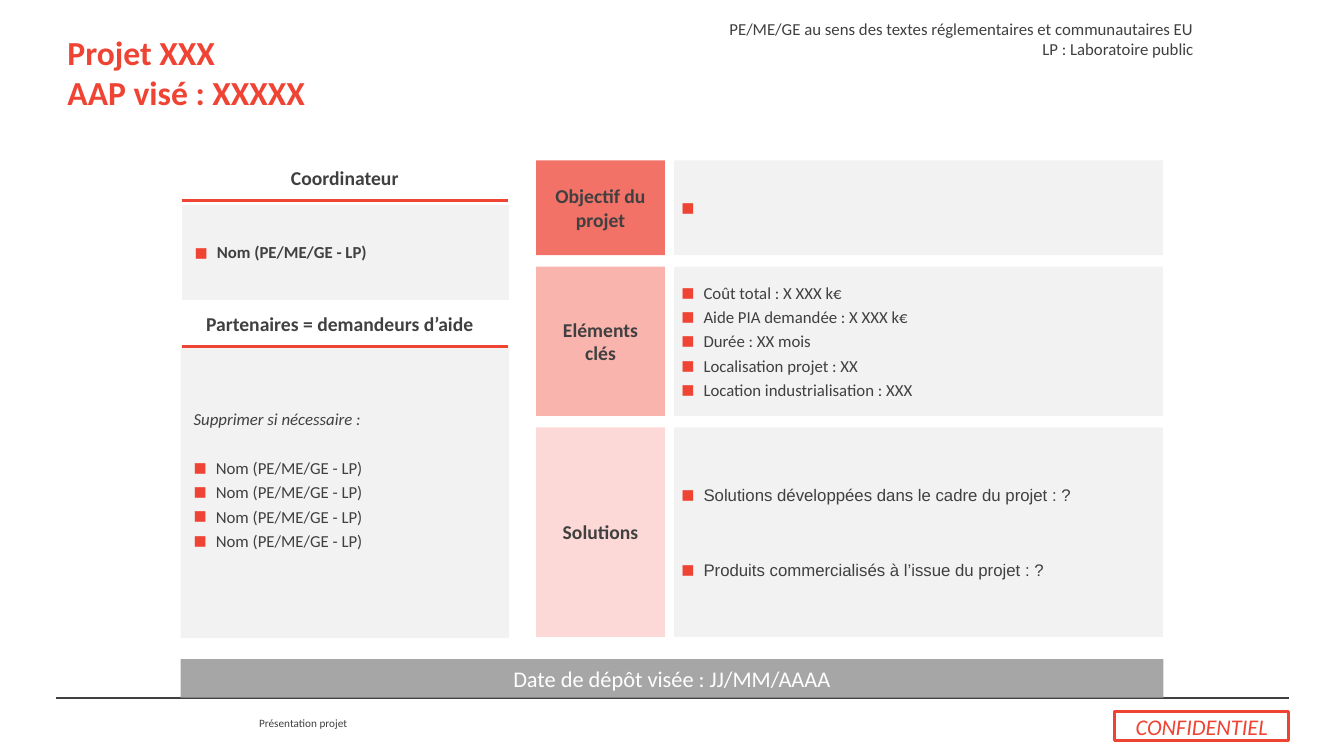
import dataclasses
import typing

import lxml.etree
import pptx
import pptx.dml.color
import pptx.enum.shapes
import pptx.enum.text
import pptx.oxml.ns
import pptx.util

Cm = pptx.util.Cm
Pt = pptx.util.Pt
ALIGN = pptx.enum.text.PP_ALIGN
ANCHOR = pptx.enum.text.MSO_ANCHOR


@dataclasses.dataclass(frozen=True)
class Theme:
    red: str = "EF4333"
    dark: str = "404040"
    pale: str = "F2F2F2"
    grey: str = "A6A6A6"
    white: str = "FFFFFF"
    font: str = "Calibri"
    alt: str = "Arial"
    title: int = 24
    large: int = 16
    head: int = 14
    body: int = 12
    foot: int = 8


class Box(typing.NamedTuple):
    left: float
    top: float
    width: float
    height: float


class Item(typing.NamedTuple):
    text: str
    bullet: bool = True
    italic: bool = False
    before: float = 0


class Row(typing.NamedTuple):
    label: str
    fill: str
    height: float
    items: list[Item]
    font: str


class Head(typing.NamedTuple):
    text: str
    top: float
    right: float


THEME = Theme()
PAD = (0.25, 0.13, 0.25, 0.13)
NONE = (0, 0, 0, 0)


def rgb(code: str) -> pptx.dml.color.RGBColor:
    return pptx.dml.color.RGBColor.from_string(code)


def add_tag(parent, tag: str, **attrs: str):
    return lxml.etree.SubElement(parent, pptx.oxml.ns.qn(tag), attrs)


def mark(para, bullet: bool) -> None:
    """Indent a list line and give it a red square."""
    props = para._p.get_or_add_pPr()
    props.set("marL", str(Cm(0.64 if bullet else 0.08)))
    props.set("indent", str(Cm(-0.56 if bullet else 0)))
    if bullet:
        add_tag(add_tag(props, "a:buClr"), "a:srgbClr", val=THEME.red)
        add_tag(props, "a:buSzPct", val="130000")
        add_tag(props, "a:buFont", typeface=THEME.alt)
        add_tag(props, "a:buChar", char="■")


def write(frame, text: str | list[Item], *, size: int = THEME.body,
          color: str = THEME.dark, font: str = THEME.font, bold: bool = False,
          italic: bool = False, align=ALIGN.LEFT, anchor=ANCHOR.MIDDLE,
          pad: tuple = PAD, wrap: bool = True) -> None:
    """Fill a text frame with plain text or with list items."""
    frame.word_wrap = wrap
    frame.vertical_anchor = anchor
    (frame.margin_left, frame.margin_top,
     frame.margin_right, frame.margin_bottom) = map(Cm, pad)
    listed = not isinstance(text, str)
    items = text if listed else [Item(text)]
    for index, item in enumerate(items):
        para = frame.add_paragraph() if index else frame.paragraphs[0]
        para.text = item.text
        para.alignment = align
        if listed:
            para.space_after = Pt(3)
            if item.before:
                para.space_before = Pt(item.before)
            mark(para, item.bullet)
        for run in para.runs:
            run.font.name = font
            run.font.size = Pt(size)
            run.font.bold = bold
            run.font.italic = italic or item.italic
            run.font.color.rgb = rgb(color)


def draw_box(slide, box: Box, fill: str | None = None, line: str | None = None):
    shape = slide.shapes.add_shape(
        pptx.enum.shapes.MSO_SHAPE.RECTANGLE, *map(Cm, box))
    shape.shadow.inherit = False
    if fill:
        shape.fill.solid()
        shape.fill.fore_color.rgb = rgb(fill)
    else:
        shape.fill.background()
    if line:
        shape.line.color.rgb = rgb(line)
        shape.line.width = Pt(2)
    else:
        shape.line.fill.background()
    return shape.text_frame


def draw_text(slide, box: Box):
    return slide.shapes.add_textbox(*map(Cm, box)).text_frame


def draw_line(slide, left: float, right: float, top: float,
              color: str, width: float) -> None:
    line = slide.shapes.add_connector(
        pptx.enum.shapes.MSO_CONNECTOR.STRAIGHT,
        Cm(left), Cm(top), Cm(right), Cm(top))
    line.line.color.rgb = rgb(color)
    line.line.width = Pt(width)
    add_tag(line._element.spPr, "a:effectLst")


def draw_lead(slide, box: Box, items: list[Item]) -> None:
    """Draw the one-cell table that names the lead."""
    table = slide.shapes.add_table(1, 1, *map(Cm, box)).table
    table.first_row = table.horz_banding = False
    cell = table.cell(0, 0)
    write(cell.text_frame, items, bold=True)
    cell.vertical_anchor = ANCHOR.MIDDLE
    edge = add_tag(cell._tc.get_or_add_tcPr(), "a:lnB", w=str(Pt(3)))
    add_tag(add_tag(edge, "a:solidFill"), "a:srgbClr", val=THEME.white)
    cell.fill.solid()
    cell.fill.fore_color.rgb = rgb(THEME.pale)


LEFT, SIDE = 4.55, 8.28
TOP, GAP = 4.04, 0.29
NAME = "Nom (PE/ME/GE - LP)"
HEADS = [Head("Coordinateur", 3.91, 0.25),
         Head("Partenaires = demandeurs d’aide", 7.59, 0.5)]
TEAM = [Item("Supprimer si nécessaire :", bullet=False, italic=True),
        Item(NAME, before=17.5), *[Item(NAME)] * 3]
ROWS = [
    Row("Objectif du projet", "F27268", 2.39, [Item(" ")], THEME.font),
    Row("Eléments\vclés", "F9B4AD", 3.76, [
        Item("Coût total : X XXX k€"), Item("Aide PIA demandée : X XXX k€"),
        Item("Durée : XX mois"), Item("Localisation projet : XX"),
        Item("Location industrialisation : XXX")], THEME.font),
    Row("Solutions", "FCD9D6", 5.28, [
        Item("Solutions développées dans le cadre du projet : ?"),
        Item("Produits commercialisés à l’issue du projet : ?", before=36)],
        THEME.alt),
]


def main() -> None:
    deck = pptx.Presentation()
    deck.slide_width, deck.slide_height = Cm(33.87), Cm(19.05)
    slide = deck.slides.add_slide(deck.slide_layouts[6])

    # Title and note
    write(draw_text(slide, Box(1.7, 0.76, 30.48, 2.13)),
          "Projet XXX\vAAP visé : XXXXX", size=THEME.title,
          color=THEME.red, bold=True, pad=(0, 0.13, 0, 0.13))
    write(draw_text(slide, Box(17.93, 0.33, 12.4, 1.27)),
          "PE/ME/GE au sens des textes réglementaires et communautaires EU\v"
          "LP : Laboratoire public", align=ALIGN.RIGHT, anchor=ANCHOR.TOP)

    # Lead and partners
    write(draw_box(slide, Box(LEFT, 8.71, SIDE, 7.37), THEME.pale),
          TEAM, pad=(0.25, 0.13, 0.25, 0.74))
    for head in HEADS:
        write(draw_box(slide, Box(LEFT, head.top, SIDE, 1.12), THEME.white),
              head.text, size=THEME.head, bold=True, align=ALIGN.CENTER,
              anchor=ANCHOR.BOTTOM, pad=(0.25, 0.25, head.right, 0.25))
        draw_line(slide, LEFT + 0.03, LEFT + SIDE - 0.03, head.top + 1.15,
                  THEME.red, 2)
    draw_lead(slide, Box(4.57, 5.16, 8.26, 2.44), [Item(NAME)])

    # Project rows
    top = TOP
    for row in ROWS:
        write(draw_box(slide, Box(13.51, top, 3.25, row.height), row.fill),
              row.label, size=THEME.head, bold=True, align=ALIGN.CENTER,
              pad=NONE)
        write(draw_box(slide, Box(16.99, top, 12.32, row.height), THEME.pale),
              row.items, font=row.font, pad=(0.1, 0.1, 0.1, 0.1))
        top += row.height + GAP

    # Date bar and footer
    draw_line(slide, 1.4, 32.49, 17.58, THEME.dark, 1.5)
    write(draw_box(slide, Box(LEFT, 16.61, 24.77, 0.97), THEME.grey),
          "Date de dépôt visée : JJ/MM/AAAA", size=THEME.large,
          color=THEME.white, align=ALIGN.CENTER)
    write(draw_text(slide, Box(6.53, 18.06, 2.24, 0.33)), "Présentation projet",
          size=THEME.foot, anchor=ANCHOR.TOP, pad=NONE, wrap=False)
    write(draw_box(slide, Box(28.09, 17.93, 4.39, 0.74), line=THEME.red),
          "CONFIDENTIEL", size=THEME.large, color=THEME.red, italic=True,
          align=ALIGN.CENTER)
    deck.save("out.pptx")


if __name__ == "__main__":
    main()
